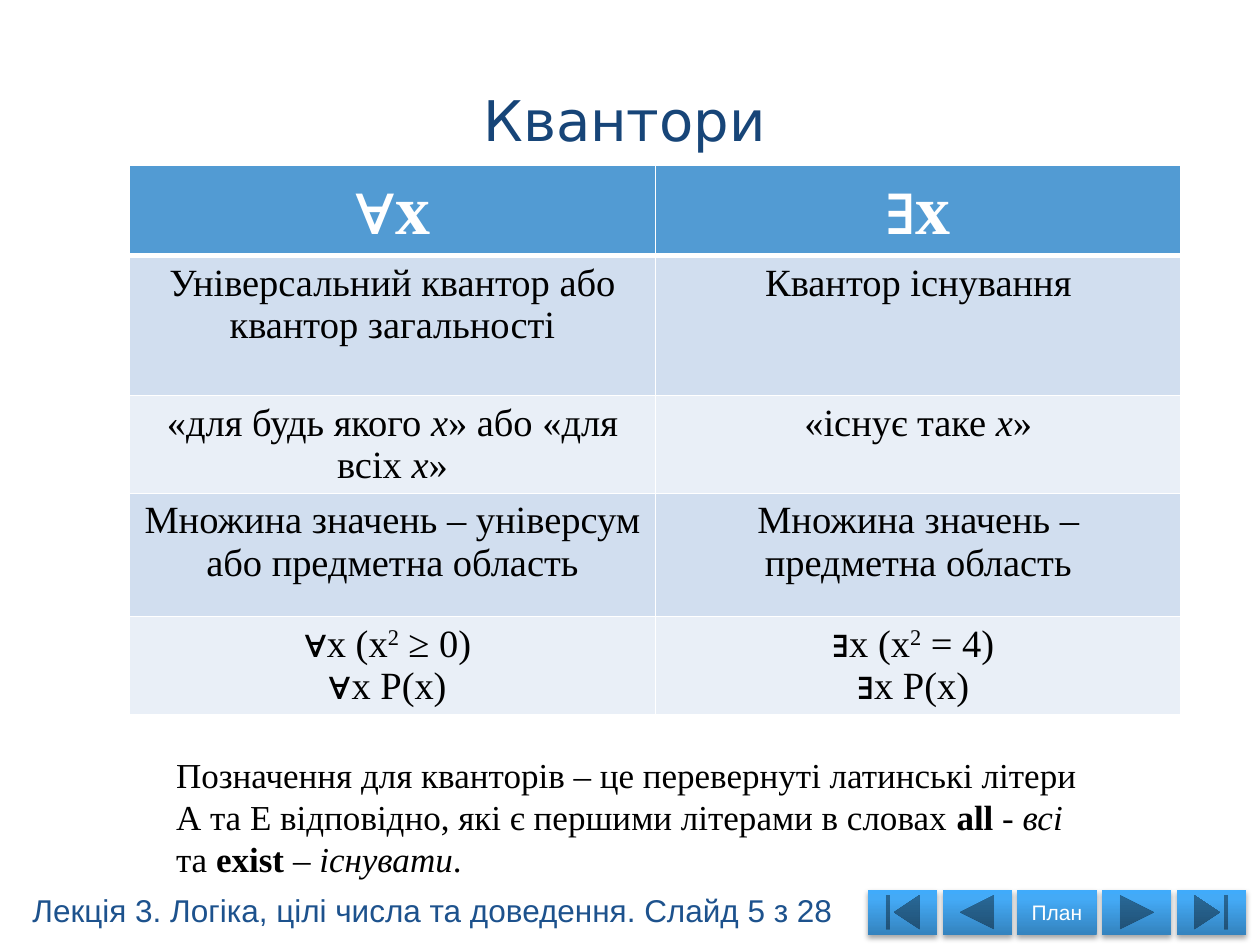
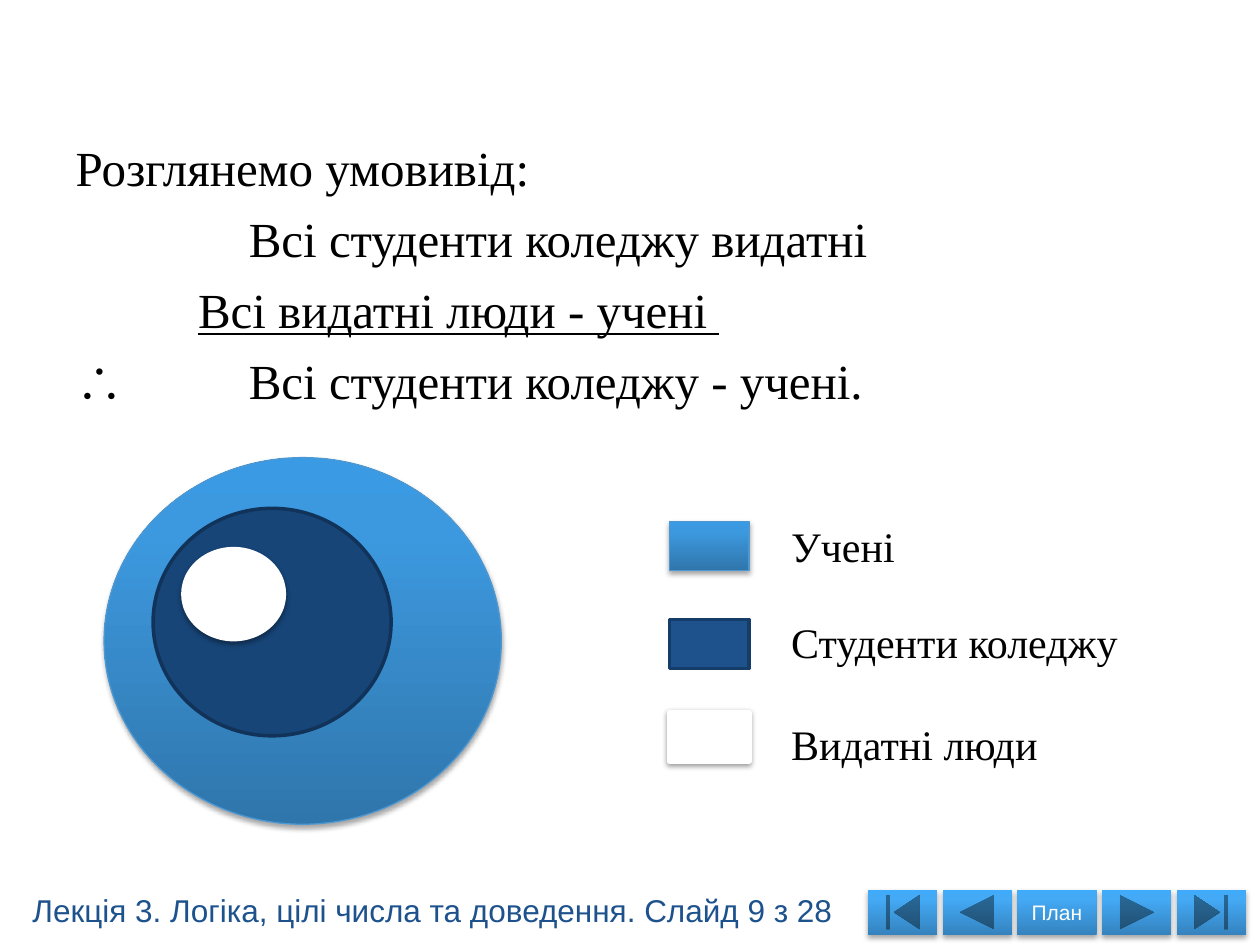
from copy import deepcopy
from dataclasses import dataclass

from lxml.etree import SubElement
from pptx import Presentation
from pptx.dml.color import RGBColor
from pptx.enum.shapes import MSO_SHAPE
from pptx.enum.text import MSO_ANCHOR, MSO_AUTO_SIZE, PP_ALIGN
from pptx.oxml.ns import qn
from pptx.util import Pt


@dataclass(frozen=True)
class Theme:
    """Colours, fonts and type sizes of the deck."""
    white: str = "FFFFFF"
    black: str = "000000"
    navy: str = "174578"
    rim: str = "113359"
    blue: str = "1D528D"
    edge: str = "153D68"
    sky: str = "4D98D2"
    head: str = "529BD3"
    bands: tuple = ("D1DEEF", "E9EFF7")
    button: tuple = ((0, "3483BE"), (0.8, "44AAF6"), (1, "40ABFB"))
    sea: tuple = ((0, "2F76AC"), (0.8, "3D99DF"), (1, "3A9AE3"))
    serif: str = "Times New Roman"
    sans: str = "Arial"
    title: str = "DejaVu Sans"
    big: int = 40
    main: int = 32
    body: int = 28
    label: int = 24
    cell: int = 22
    note: int = 20
    foot: int = 18
    small: int = 12


T = Theme()
SOFT = (35, 1.8)
DEEP = (38, 1.6)
LOOKS = {
    "sea": (T.sea, T.sky, 0.75, SOFT),
    "navy": (T.navy, T.rim, 2, None),
    "blue": (T.blue, T.edge, 2, None),
    "white": (T.white, T.white, 3, DEEP),
    "button": (T.button, None, 0, SOFT),
}
HEADS = ("∀x", "∃х")
ROWS = (
    (80, (("Універсальний квантор або квантор загальності",),),
     (("Квантор існування",),)),
    (55.5, (("«для будь якого ", ("х", "i"), "» або «для всіх ", ("х", "i"), "»"),),
     (("«існує таке ", ("х", "i"), "»"),)),
    (70.5, (("Множина значень – універсум або предметна область",),),
     (("Множина значень – предметна область",),)),
    (55.5, (("∀x (x", ("2", "^"), " ≥ 0) "), ("∀x Р(x) ",)),
     (("∃х (х", ("2", "^"), " = 4) "), ("∃х Р(х) ",))),
)
NOTE = ("Позначення для кванторів – це перевернуті латинські літери А та Е "
        "відповідно, які є першими літерами в словах ", ("all", "b"), " - ",
        ("всі", "i"), " та ", ("exist ", "b"), "– ", ("існувати", "i"), ".")
PROOF = (
    (0, 0, ("Розглянемо умовивід:",)),
    (99, 0, ("Всі студенти коледжу видатні",)),
    (70, 0, (("Всі видатні люди - учені ", "u"),)),
    (99, -99, ("∴\tВсі студенти коледжу - учені.",)),
)
RINGS = (("sea", 0, 0, 227, 209.5), ("navy", 28, 29, 136, 130),
         ("white", 45.5, 52.5, 57, 51))
KEYS = (("sea", 4, 0, 74, "Учені"), ("blue", 60, 54.5, 203, "Студенти коледжу"),
        ("white", 113, 113, 157, "Видатні люди"))
BUTTONS = ((MSO_SHAPE.ACTION_BUTTON_BEGINNING, ""),
           (MSO_SHAPE.ACTION_BUTTON_BACK_OR_PREVIOUS, ""),
           (MSO_SHAPE.ACTION_BUTTON_CUSTOM, "План"),
           (MSO_SHAPE.ACTION_BUTTON_FORWARD_OR_NEXT, ""),
           (MSO_SHAPE.ACTION_BUTTON_END, ""))


def rgb(code):
    """Turn a hex code into a colour."""
    return RGBColor.from_string(code)


def pts(*box):
    """Turn numbers into point lengths."""
    return [Pt(n) for n in box]


def put(para, parts, size, face=T.serif, color=T.black, align=None):
    """Write parts into a paragraph, each plain or paired with a mark."""
    para.font.size, para.font.name = Pt(size), face
    para.font.color.rgb = rgb(color)
    para.alignment = align
    for part in parts:
        text, mark = (part, "") if isinstance(part, str) else part
        run = para.add_run()
        run.text = text
        if mark == "b":
            run.font.bold = True
        elif mark == "i":
            run.font.italic = True
        elif mark == "u":
            run.font.underline = True
        elif mark == "^":
            run._r.get_or_add_rPr().set("baseline", "30000")


def fill_in(shape, paint):
    """Fill a shape with one colour or with a list of upward stops."""
    if isinstance(paint, str):
        shape.fill.solid()
        shape.fill.fore_color.rgb = rgb(paint)
        return
    shape.fill.gradient()
    shape.fill.gradient_angle = 90
    stops = shape._element.spPr.find(".//" + qn("a:gsLst"))
    stops.append(deepcopy(stops[-1]))
    for stop, (place, code) in zip(shape.fill.gradient_stops, paint):
        stop.position, stop.color.rgb = place, rgb(code)


def shade(shape, alpha, drop):
    """Give a shape a soft shadow straight below."""
    glow = shape._element.spPr.find(qn("a:effectLst"))
    cast = SubElement(glow, qn("a:outerShdw"), blurRad=str(Pt(3.1)),
                      dist=str(Pt(drop)), dir="5400000", rotWithShape="0")
    tint = SubElement(cast, qn("a:srgbClr"), val=T.black)
    SubElement(tint, qn("a:alpha"), val=str(alpha * 1000))


def draw(shapes, kind, look, box):
    """Add a preset shape in one of the looks."""
    paint, edge, width, cast = LOOKS[look]
    shape = shapes.add_shape(kind, *pts(*box))
    fill_in(shape, paint)
    if edge:
        shape.line.color.rgb = rgb(edge)
        shape.line.width = Pt(width)
    else:
        shape.line.fill.background()
    shape.shadow.inherit = False
    if cast:
        shade(shape, *cast)
    return shape


def write(slide, box, parts, size, wrap=False, **style):
    """Add a text box that fits its text."""
    frame = slide.shapes.add_textbox(*pts(*box)).text_frame
    frame.word_wrap = wrap
    frame.auto_size = MSO_AUTO_SIZE.SHAPE_TO_FIT_TEXT
    put(frame.paragraphs[0], parts, size, **style)


def move(shape, box):
    """Set the place and size of a placeholder."""
    shape.left, shape.top, shape.width, shape.height = pts(*box)


def rule(cell, foot):
    """Draw white borders round a cell, the lower one of its own width."""
    props = cell._tc.get_or_add_tcPr()
    for at, (side, width) in enumerate((("L", 1), ("R", 1), ("T", 1), ("B", foot))):
        line = props.makeelement(qn("a:ln" + side), {"w": str(Pt(width))})
        paint = SubElement(line, qn("a:solidFill"))
        SubElement(paint, qn("a:srgbClr"), val=T.white)
        props.insert(at, line)


def grid(slide, box):
    """Build the table that compares both quantifiers."""
    table = slide.shapes.add_table(len(ROWS) + 1, 2, *pts(*box)).table
    for col in table.columns:
        col.width = Pt(box[2] / 2)
    table.rows[0].height = Pt(51)
    for cell, text in zip(table.rows[0].cells, HEADS):
        fill_in(cell, T.head)
        rule(cell, 3)
        put(cell.text_frame.paragraphs[0], [(text, "b")], T.big,
            color=T.white, align=PP_ALIGN.CENTER)
    for n, (height, *texts) in enumerate(ROWS):
        row = table.rows[n + 1]
        row.height = Pt(height)
        for cell, lines in zip(row.cells, texts):
            fill_in(cell, T.bands[n % 2])
            rule(cell, 1)
            frame = cell.text_frame
            for i, parts in enumerate(lines):
                para = frame.add_paragraph() if i else frame.paragraphs[0]
                put(para, parts, T.cell, align=PP_ALIGN.CENTER)


def proof(holder, box):
    """Set the syllogism in the body placeholder."""
    move(holder, box)
    frame = holder.text_frame
    for i, (left, hang, parts) in enumerate(PROOF):
        para = frame.add_paragraph() if i else frame.paragraphs[0]
        props = para._p.get_or_add_pPr()
        props.set("marL", str(Pt(left)))
        props.set("indent", str(Pt(hang)))
        SubElement(props, qn("a:buNone"))
        para.space_before = Pt(7 if i else 0)
        put(para, parts, T.body)


def rings(slide, left, top):
    """Draw the nested sets."""
    group = slide.shapes.add_group_shape()
    for look, x, y, wide, high in RINGS:
        draw(group.shapes, MSO_SHAPE.OVAL, look, (left + x, top + y, wide, high))


def legend(slide, left, top):
    """Name the sets beside their swatches."""
    for look, y, base, wide, text in KEYS:
        draw(slide.shapes, MSO_SHAPE.RECTANGLE, look, (left, top + y, 45.5, 28))
        write(slide, (left + 62.5, top + base, wide, 36), [text], T.label)


def footer(slide, number, left=11.5, top=505.5):
    """Add the lecture line and the row of buttons."""
    group = slide.shapes.add_group_shape()
    x = left + 484.5
    for kind, text in BUTTONS:
        wide = 45.4 if text else 39.6
        shape = draw(group.shapes, kind, "button", (x, top + 2.8, wide, 26))
        x += wide + 3.05
        if text:
            frame = shape.text_frame
            frame.margin_left = frame.margin_right = 0
            frame.vertical_anchor = MSO_ANCHOR.MIDDLE
            put(frame.paragraphs[0], [text], T.small, T.sans, T.white,
                PP_ALIGN.CENTER)
    line = f"Лекція 3. Логіка, цілі числа та доведення. Слайд {number} з 28"
    write(slide, (left, top, 476, 29), [line], T.foot, face=T.sans, color=T.blue)


def signs(deck):
    """Build the slide on quantifiers."""
    slide = deck.slides.add_slide(deck.slide_layouts[5])
    title = slide.shapes.title
    move(title, (48, 45.5, 618, 45))
    title.text_frame.vertical_anchor = MSO_ANCHOR.MIDDLE
    put(title.text_frame.paragraphs[0], ["Квантори"], T.main, T.title, T.navy,
        PP_ALIGN.CENTER)
    grid(slide, (74, 94.5, 601, 312.5))
    write(slide, (93.5, 427, 533, 80), NOTE, T.note, wrap=True)
    footer(slide, 5)


def sets(deck):
    """Build the slide on the syllogism and its sets."""
    slide = deck.slides.add_slide(deck.slide_layouts[1])
    title = slide.shapes.title._element
    title.getparent().remove(title)
    proof(slide.placeholders[1], (36, 75, 648, 435))
    rings(slide, 59.5, 261.5)
    legend(slide, 382.5, 294)
    footer(slide, 9)


def main():
    """Build and save the deck."""
    deck = Presentation()
    deck.slide_width, deck.slide_height = pts(720, 540)
    signs(deck)
    sets(deck)
    deck.save("out.pptx")


if __name__ == "__main__":
    main()
